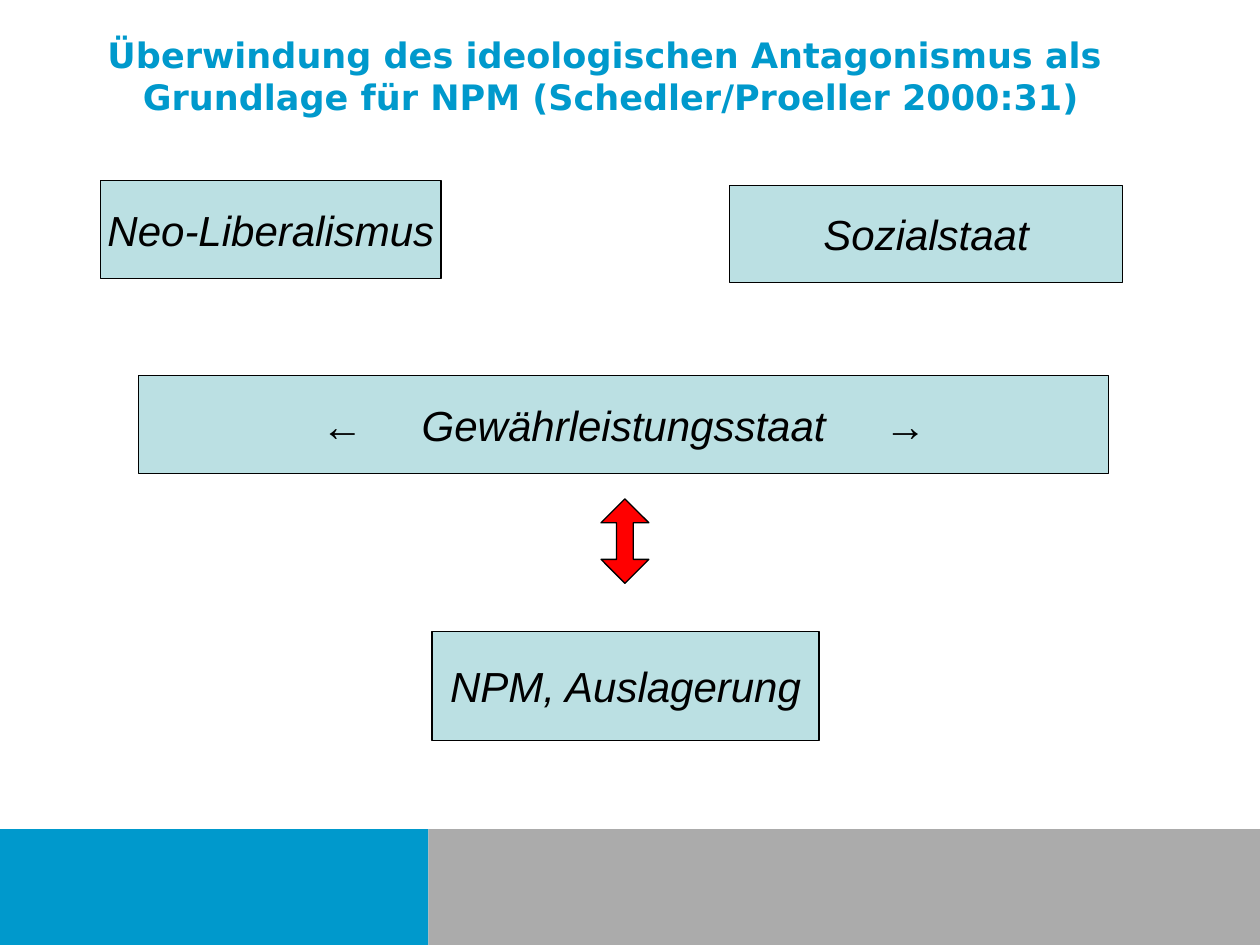
import pptx
import pptx.util
import pptx.dml.color
import pptx.enum.shapes
import pptx.enum.text
import pptx.oxml.ns
import lxml.etree

Inches, Pt = pptx.util.Inches, pptx.util.Pt
RGBColor = pptx.dml.color.RGBColor
SHAPE = pptx.enum.shapes.MSO_SHAPE
ALIGN = pptx.enum.text.PP_ALIGN
ANCHOR = pptx.enum.text.MSO_ANCHOR

BLUE = RGBColor(0x00, 0x99, 0xCC)
GRAY = RGBColor(0xAB, 0xAB, 0xAB)
PALE = RGBColor(0xBB, 0xE0, 0xE3)
RED = RGBColor(0xFF, 0x00, 0x00)
BLACK = RGBColor(0x00, 0x00, 0x00)


def add_filled(slide, kind, left, top, width, height, fill, outlined=True):
    s = slide.shapes.add_shape(kind, Inches(left), Inches(top), Inches(width), Inches(height))
    s.shadow.inherit = False
    s.fill.solid()
    s.fill.fore_color.rgb = fill
    if outlined:
        s.line.color.rgb = BLACK
        s.line.width = Pt(0.75)
    else:
        s.line.fill.background()
    return s


def add_title(slide, text):
    tf = slide.shapes.add_textbox(Inches(0.35), Inches(0.22), Inches(9), Inches(1.25)).text_frame
    tf.word_wrap = True
    p = tf.paragraphs[0]
    p.text = text
    p.alignment = ALIGN.CENTER
    for r in p.runs:
        r.font.name, r.font.size, r.font.bold = "DejaVu Sans", Pt(20), True
        r.font.color.rgb = BLUE


def add_tabs(p, stops):
    qn = pptx.oxml.ns.qn
    tabs = lxml.etree.SubElement(p._p.get_or_add_pPr(), qn("a:tabLst"))
    for position, align in stops:
        lxml.etree.SubElement(tabs, qn("a:tab"), pos=str(Inches(position)), algn=align)


def add_concept(slide, text, left, top, width, height, inset=0.1, stops=()):
    tf = add_filled(slide, SHAPE.RECTANGLE, left, top, width, height, PALE).text_frame
    tf.word_wrap = bool(stops)
    tf.vertical_anchor = ANCHOR.MIDDLE
    tf.margin_left = Inches(inset)
    p = tf.paragraphs[0]
    p.text = text
    p.alignment = ALIGN.LEFT if stops else ALIGN.CENTER
    if stops:
        add_tabs(p, stops)
    for r in p.runs:
        r.font.name, r.font.size, r.font.italic = "Arial", Pt(24), True
        r.font.color.rgb = BLACK


def main():
    prs = pptx.Presentation()
    prs.slide_width, prs.slide_height = Inches(10), Inches(7.5)
    slide = prs.slides.add_slide(prs.slide_layouts[6])

    # Footer band
    for left, width, height, fill in ((0, 3.4, 0.92, BLUE), (3.4, 6.6, 0.92, GRAY),
                                      (0.42, 2.42, 0.58, BLUE)):
        add_filled(slide, SHAPE.RECTANGLE, left, 6.58, width, height, fill, outlined=False)

    add_title(slide, "Überwindung des ideologischen Antagonismus als \v"
                     "Grundlage für NPM (Schedler/Proeller 2000:31)")

    # Concepts; the middle one has an arrow on either side of its word
    add_concept(slide, "Neo-Liberalismus", 0.8, 1.43, 2.7, 0.78)
    add_concept(slide, "Sozialstaat", 5.79, 1.47, 3.12, 0.77)
    add_concept(slide, "←\tGewährleistungsstaat\t→", 1.1, 2.98, 7.7, 0.78,
                inset=1.45, stops=((2.4, "ctr"), (4.47, "l")))
    add_concept(slide, "NPM, Auslagerung", 3.43, 5.01, 3.07, 0.87)

    # Link between guarantor state and NPM
    arrow = add_filled(slide, SHAPE.UP_DOWN_ARROW, 4.77, 3.96, 0.38, 0.67, RED)
    arrow.adjustments[0] = 0.5
    arrow.adjustments[1] = 0.35

    prs.save("out.pptx")


if __name__ == "__main__":
    main()
